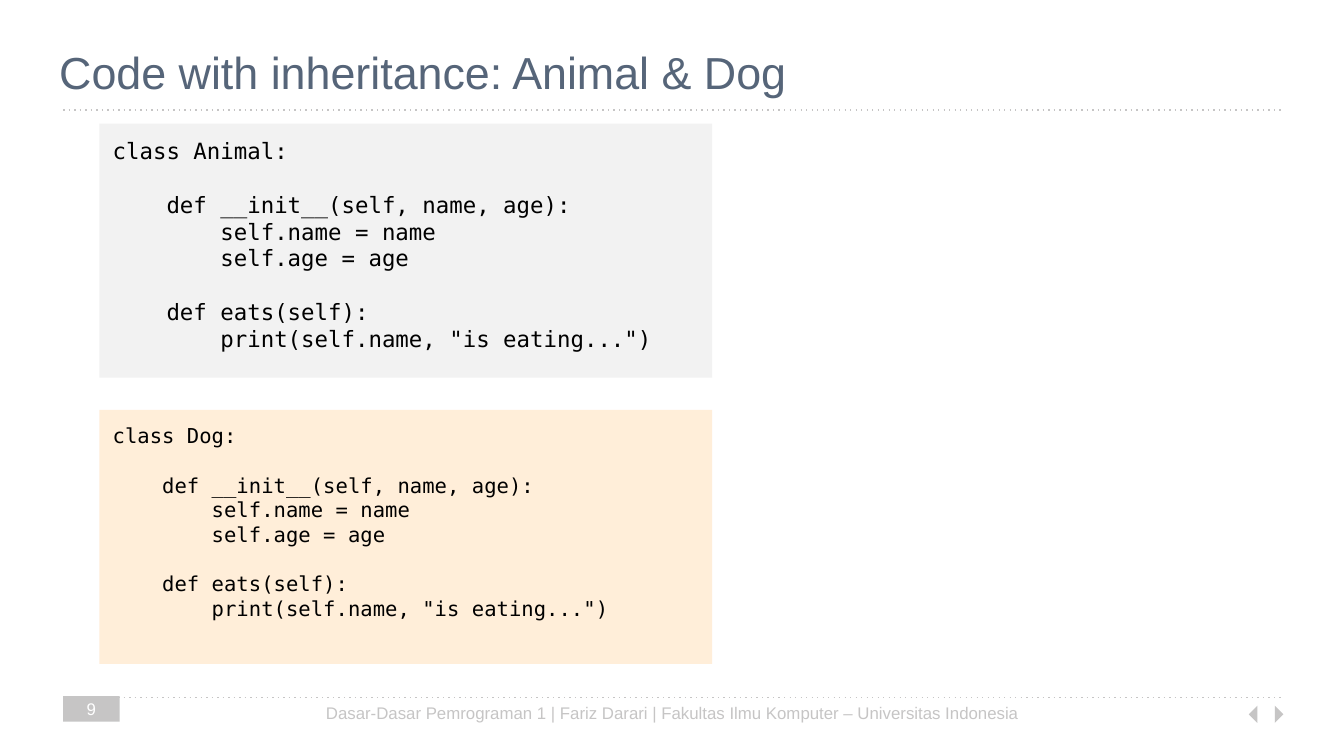
from lxml import etree
from pptx import Presentation
from pptx import util as u
from pptx.dml.color import RGBColor
from pptx.enum import shapes, text
from pptx.oxml.ns import qn

INK = {"gray": "C6C5C5", "title": "566579", "code": "000000",
       "white": "FFFFFF", "base": "F2F2F2", "child": "FFEED9"}
SANS, MONO = "Arial", "DejaVu Sans Mono"
BODY = """

    def __init__(self, name, age):
        self.name = name
        self.age = age

    def eats(self):
        print(self.name, "is eating...")"""


def tint(name):
    return RGBColor.from_string(INK[name])


def place(item, box):
    item.left, item.top, item.width, item.height = map(u.Inches, box)


def write(item, words, size, ink, face=SANS, align=text.PP_ALIGN.LEFT,
          anchor=text.MSO_ANCHOR.TOP):
    frame = item.text_frame
    frame.word_wrap = True
    frame.auto_size = text.MSO_AUTO_SIZE.NONE
    frame.vertical_anchor = anchor
    frame.margin_left = frame.margin_right = u.Inches(0.1)
    frame.margin_top = frame.margin_bottom = u.Inches(0.1)
    for i, line in enumerate(words.split("\n")):
        para = frame.add_paragraph() if i else frame.paragraphs[0]
        para.alignment = align
        para.font.size = u.Pt(size)
        para.font.name = face
        if line:
            run = para.add_run()
            run.text = line
            run.font.size = u.Pt(size)
            run.font.name = face
            run.font.color.rgb = tint(ink)


def block(slide, kind, box, ink):
    item = slide.shapes.add_shape(kind, *map(u.Inches, box))
    item.shadow.inherit = False
    item.fill.solid()
    item.fill.fore_color.rgb = tint(ink)
    item.line.fill.background()
    return item


def rule(slide, left, top, width):
    line = slide.shapes.add_connector(
        shapes.MSO_CONNECTOR.STRAIGHT,
        *map(u.Inches, (left, top, left + width, top)))
    line.line.color.rgb = tint("gray")
    line.line.width = u.Pt(0.75)
    props = line._element.spPr
    etree.SubElement(props.find(qn("a:ln")), qn("a:prstDash"), val="dot")
    etree.SubElement(props, qn("a:effectLst"))


def header(slide, left, top, width, height):
    title = slide.shapes.title
    place(title, (left - 0.13, top, width + 0.26, height))
    write(title, "Code with inheritance: Animal & Dog", 24, "title")
    rule(slide, left, top + 0.59, width)


def footer(slide, left, top, width):
    rule(slide, left, top + 0.01, width)
    right = left + width
    for shift, turn in ((0.22, 45), (0.09, 225)):
        arrow = block(slide, shapes.MSO_SHAPE.RIGHT_TRIANGLE,
                      (right - shift, top + 0.09, 0.09, 0.09), "gray")
        arrow.rotation = turn
    page = block(slide, shapes.MSO_SHAPE.RECTANGLE,
                 (left, top, 0.42, 0.19), "gray")
    write(page, "9", 9, "white", align=text.PP_ALIGN.CENTER,
          anchor=text.MSO_ANCHOR.MIDDLE)
    wide = 5.4
    note = slide.shapes.add_textbox(*map(u.Inches, (
        left + (width - wide) / 2, top - 0.05, wide, 0.27)))
    write(note, "Dasar-Dasar Pemrograman 1 | Fariz Darari | "
          "Fakultas Ilmu Komputer – Universitas Indonesia",
          9, "gray", align=text.PP_ALIGN.CENTER)


def listing(slide, box, name, size, ink):
    panel = block(slide, shapes.MSO_SHAPE.RECTANGLE, box, ink)
    write(panel, f"class {name}:{BODY}", size, "code", MONO)


def main():
    deck = Presentation()
    deck.slide_width = u.Inches(10)
    deck.slide_height = deck.slide_width * 9 // 16
    slide = deck.slides.add_slide(deck.slide_layouts[5])
    header(slide, 0.47, 0.23, 9.06, 0.51)
    footer(slide, 0.47, 5.18, 9.06)
    panels = (("Animal", 12, "base"), ("Dog", 11, "child"))
    for i, (name, size, ink) in enumerate(panels):
        listing(slide, (0.74, 0.92 + i * 2.13, 4.56, 1.89), name, size, ink)
    deck.save("out.pptx")


if __name__ == "__main__":
    main()
